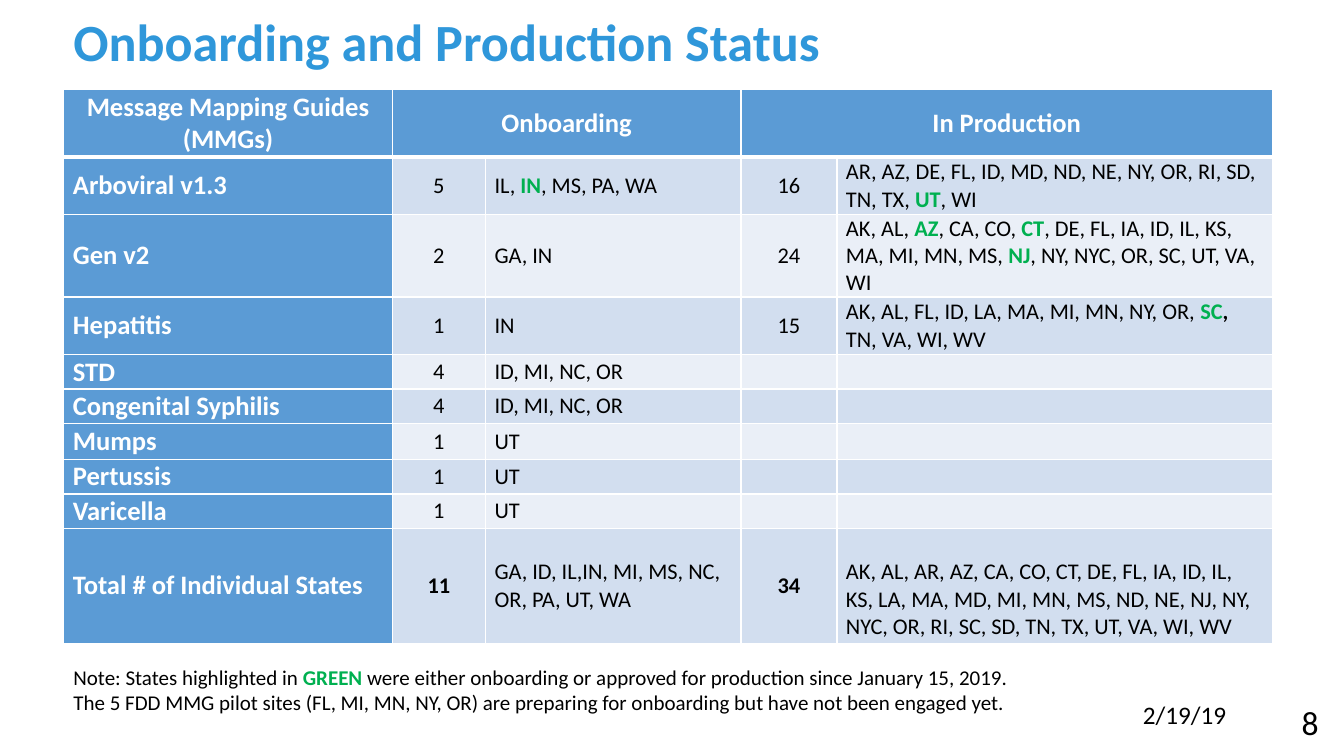
from dataclasses import dataclass

from lxml import etree
from pptx import Presentation
from pptx.dml.color import RGBColor
from pptx.enum.text import MSO_ANCHOR, PP_ALIGN
from pptx.oxml.ns import qn
from pptx.util import Pt

LEFT, CENTER, RIGHT = PP_ALIGN.LEFT, PP_ALIGN.CENTER, PP_ALIGN.RIGHT
TOP, MIDDLE, BOTTOM = MSO_ANCHOR.TOP, MSO_ANCHOR.MIDDLE, MSO_ANCHOR.BOTTOM

FONT = "Calibri"
BLACK, WHITE, GREEN = "000000", "FFFFFF", "00B050"
TITLE_BLUE, HEADER_BLUE = "2F97DA", "5B9BD5"
BANDS = ("D2DEEF", "EAEFF7")
HEADING_SIZE, BODY_SIZE, NOTE_SIZE = 19, 16, 15


@dataclass(frozen=True)
class Run:
    text: str
    color: str = BLACK
    bold: bool = False


Lines = list[list[Run]]


@dataclass(frozen=True)
class Label:
    left: float
    top: float
    width: float
    height: float
    size: float
    lines: Lines
    align: PP_ALIGN = LEFT
    anchor: MSO_ANCHOR = TOP
    spacing: float | None = None


@dataclass(frozen=True)
class Guide:
    name: str
    height: float
    onboarding_count: str
    onboarding: Lines
    production_count: str = ""
    production: Lines | None = None
    bold_counts: bool = False
    production_inset: float = 0


def plain(text: str) -> Lines:
    return [[Run(text)]]


def heading(text: str) -> Lines:
    return [[Run(text, WHITE, True)]]


def green(text: str) -> Run:
    return Run(text, GREEN, True)


COLUMN_WIDTHS = (234.5, 66.75, 182.5, 68.5, 311)
HEADER_HEIGHT = 48
HEADERS = {0: "Message Mapping Guides (MMGs)", 1: "Onboarding", 3: "In Production"}

GUIDES = [
    Guide("Arboviral v1.3", 41.4,
          "5", [[Run("IL, "), green("IN"), Run(", MS, PA, WA")]],
          "16", [[Run("AR, AZ, DE, FL, ID, MD, ND, NE, NY, OR, RI, SD, TN, TX, "),
                  green("UT"), Run(", WI")]]),
    Guide("Gen v2", 58.6,
          "2", plain("GA, IN"),
          "24", [[Run("AK, AL, "), green("AZ"), Run(", CA, CO, "), green("CT"),
                  Run(", DE, FL, IA, ID, IL, KS, MA, MI, MN, MS, "), green("NJ"),
                  Run(", NY, NYC, OR, SC, UT, VA, WI")]]),
    Guide("Hepatitis", 41.4,
          "1", plain("IN"),
          "15", [[Run("AK, AL, FL, ID, LA, MA, MI, MN, NY, OR, "), green("SC"),
                  Run(",", bold=True)],
                 [Run("TN, VA, WI, WV")]]),
    Guide("STD", 24.4, "4", plain("ID, MI, NC, OR")),
    Guide("Congenital Syphilis", 24.4, "4", plain("ID, MI, NC, OR")),
    Guide("Mumps", 26.2, "1", plain("UT")),
    Guide("Pertussis", 24.4, "1", plain("UT")),
    Guide("Varicella", 24.6, "1", plain("UT")),
    Guide("Total # of Individual States", 82.2,
          "11", plain("GA, ID, IL,IN, MI, MS, NC, OR, PA, UT, WA"),
          "34", plain("AK, AL, AR, AZ, CA, CO, CT, DE, FL, IA, ID, IL, KS, LA, MA, MD, "
                      "MI, MN, MS, ND, NE, NJ, NY, NYC, OR, RI, SC, SD, TN, TX, UT, VA, "
                      "WI, WV"),
          bold_counts=True, production_inset=19.5),
]

LABELS = [
    Label(858.24, 497.5, 90.72, 36, 24, plain("8"), RIGHT),
    Label(45.36, 3.6, 864, 51.12, 37.3,
          [[Run("Onboarding and Production Status", TITLE_BLUE, True)]],
          anchor=BOTTOM, spacing=40),
    Label(809.28, 496.08, 87.84, 28.8, 18, plain("2/19/19")),
    Label(45.36, 470.88, 696.24, 61.92, NOTE_SIZE,
          [[Run("Note: States highlighted in"), green(" GREEN "),
            Run("were either onboarding or approved for production since January 15, 2019.")],
           [Run("The 5 FDD MMG pilot sites (FL, MI, MN, NY, OR) are preparing for "
                "onboarding but have not been engaged yet.")]]),
]


def rgb(value: str) -> RGBColor:
    return RGBColor.from_string(value)


def write_lines(frame, lines: Lines, size: float, align: PP_ALIGN,
                spacing: float | None = None) -> None:
    for index, runs in enumerate(lines):
        paragraph = frame.add_paragraph() if index else frame.paragraphs[0]
        paragraph.alignment = align
        if spacing:
            paragraph.line_spacing = Pt(spacing)
        for part in runs:
            run = paragraph.add_run()
            run.text = part.text
            run.font.name = FONT
            run.font.size = Pt(size)
            run.font.bold = part.bold
            run.font.color.rgb = rgb(part.color)


def draw_label(slide, label: Label) -> None:
    box = slide.shapes.add_textbox(Pt(label.left), Pt(label.top),
                                   Pt(label.width), Pt(label.height))
    box.text_frame.word_wrap = True
    box.text_frame.vertical_anchor = label.anchor
    write_lines(box.text_frame, label.lines, label.size, label.align, label.spacing)


def set_borders(cell, top: float, bottom: float) -> None:
    properties = cell._tc.get_or_add_tcPr()
    for side, width in (("L", 1), ("R", 1), ("T", top), ("B", bottom)):
        line = etree.SubElement(properties, qn(f"a:ln{side}"), w=str(Pt(width)))
        fill = etree.SubElement(line, qn("a:solidFill"))
        etree.SubElement(fill, qn("a:srgbClr"), val=WHITE)


def style_cell(cell, fill: str, top: float = 1, bottom: float = 1) -> None:
    set_borders(cell, top, bottom)
    cell.fill.solid()
    cell.fill.fore_color.rgb = rgb(fill)
    cell.vertical_anchor = MIDDLE
    cell.margin_left = cell.margin_right = Pt(6.5)
    cell.margin_top = cell.margin_bottom = Pt(0)


def draw_status_table(slide) -> None:
    heights = [HEADER_HEIGHT] + [guide.height for guide in GUIDES]
    table = slide.shapes.add_table(
        len(heights), len(COLUMN_WIDTHS), Pt(45.6), Pt(64),
        Pt(sum(COLUMN_WIDTHS)), Pt(sum(heights))).table
    for column, width in zip(table.columns, COLUMN_WIDTHS):
        column.width = Pt(width)
    for row, height in zip(table.rows, heights):
        row.height = Pt(height)

    for column in range(len(COLUMN_WIDTHS)):
        style_cell(table.cell(0, column), HEADER_BLUE, bottom=3)
    for column, text in HEADERS.items():
        if column:
            table.cell(0, column).merge(table.cell(0, column + 1))
        write_lines(table.cell(0, column).text_frame, heading(text), HEADING_SIZE, CENTER)

    for row, guide in enumerate(GUIDES, start=1):
        band = BANDS[(row - 1) % 2]
        contents = [
            (heading(guide.name), HEADING_SIZE, LEFT),
            ([[Run(guide.onboarding_count, bold=guide.bold_counts)]], BODY_SIZE, CENTER),
            (guide.onboarding, BODY_SIZE, LEFT),
            ([[Run(guide.production_count, bold=guide.bold_counts)]]
             if guide.production_count else [], BODY_SIZE, CENTER),
            (guide.production or [], BODY_SIZE, LEFT),
        ]
        for column, (lines, size, align) in enumerate(contents):
            cell = table.cell(row, column)
            style_cell(cell, band if column else HEADER_BLUE, top=3 if row == 1 else 1)
            write_lines(cell.text_frame, lines, size, align)
        table.cell(row, 4).margin_top = Pt(guide.production_inset)


def main() -> None:
    deck = Presentation()
    deck.slide_width, deck.slide_height = Pt(960), Pt(540)
    slide = deck.slides.add_slide(deck.slide_layouts[6])
    draw_status_table(slide)
    for label in LABELS:
        draw_label(slide, label)
    deck.save("out.pptx")


if __name__ == "__main__":
    main()
